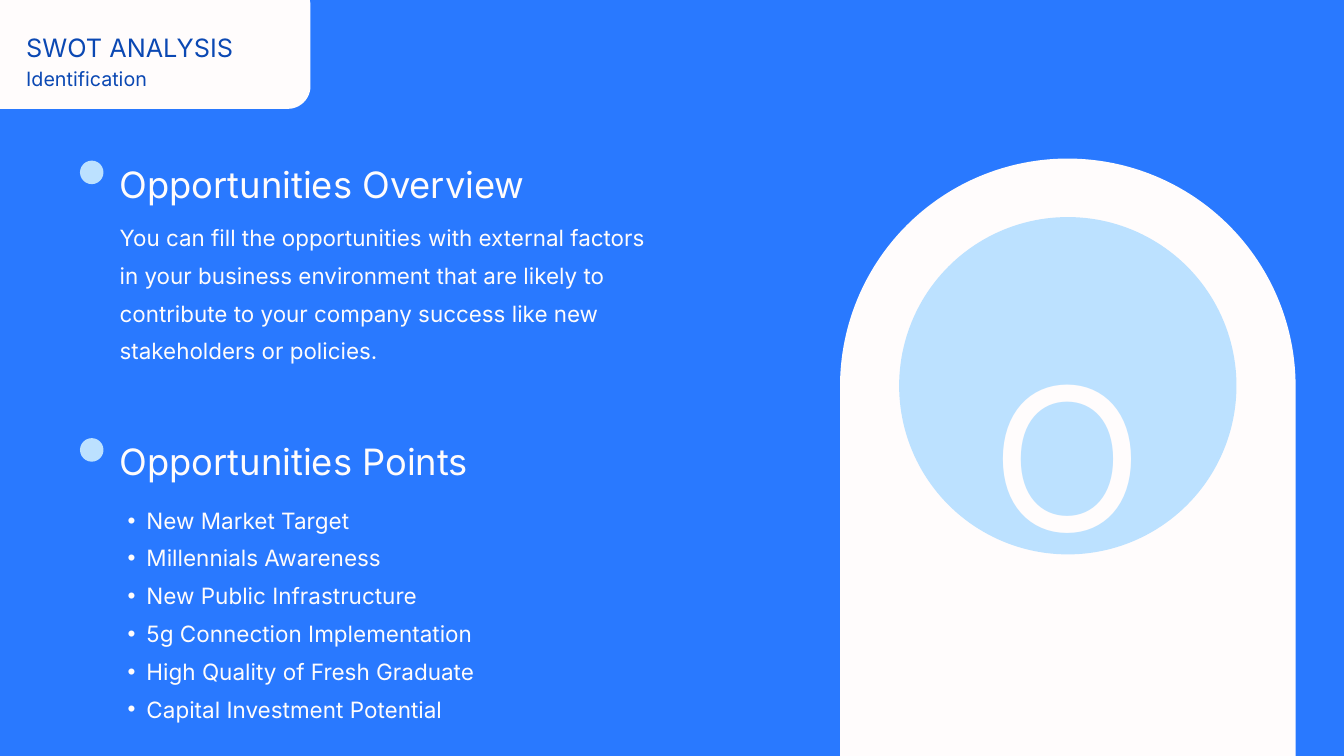
from pptx import Presentation
from pptx.dml.color import RGBColor
from pptx.enum.shapes import MSO_SHAPE
from pptx.enum.text import MSO_AUTO_SIZE, PP_ALIGN
from pptx.oxml.xmlchemy import OxmlElement
from pptx.util import Inches, Pt

BLUE, NAVY, SKY, WHITE = "2979FF", "0B48B3", "BCE1FF", "FFFCFC"


def paint(fill, color):
    fill.solid()
    fill.fore_color.rgb = RGBColor.from_string(color)


def add_text(box, lines, size, color=WHITE):
    """Add a text box at box (left, top, width, height), one paragraph per line."""
    frame = slide.shapes.add_textbox(*map(Inches, box)).text_frame
    frame.margin_left = frame.margin_right = 0
    frame.margin_top = frame.margin_bottom = 0
    frame.word_wrap = True
    frame.auto_size = MSO_AUTO_SIZE.SHAPE_TO_FIT_TEXT
    frame.text = "\n".join(lines)
    for par in frame.paragraphs:
        par.line_spacing = 1.4
        font = par.runs[0].font
        font.name, font.size = "Inter", Pt(size)
        paint(font.fill, color)
    return frame.paragraphs


prs = Presentation()
prs.slide_width, prs.slide_height = Inches(20), Inches(11.25)
slide = prs.slides.add_slide(prs.slide_layouts[6])
paint(slide.background.fill, BLUE)

# Header tab, arch, disc and heading dots
for kind, box, color, round_by in [
    (MSO_SHAPE.ROUNDED_RECTANGLE, (-0.56, -0.25, 5.18, 1.87), WHITE, 0.18),
    (MSO_SHAPE.ROUND_2_SAME_RECTANGLE, (12.5, 2.36, 6.78, 10.14), WHITE, 0.5),
    (MSO_SHAPE.OVAL, (13.38, 3.23, 5.02, 5.02), SKY, None),
    (MSO_SHAPE.OVAL, (1.19, 2.39, 0.35, 0.35), SKY, None),
    (MSO_SHAPE.OVAL, (1.19, 6.52, 0.35, 0.35), SKY, None),
]:
    shape = slide.shapes.add_shape(kind, *map(Inches, box))
    shape.shadow.inherit = False
    shape.line.fill.background()
    paint(shape.fill, color)
    if round_by:
        shape.adjustments[0] = round_by

add_text((0.39, 0.3, 4.04, 0.5), ["SWOT ANALYSIS"], 27.1, NAVY)
add_text((0.39, 0.85, 2.84, 0.39), ["Identification"], 21.1, NAVY)

letter = add_text((14.17, 3.54, 3.44, 3.98), ["O"], 212.8)
letter[0].alignment = PP_ALIGN.CENTER

add_text((1.78, 2.16, 8.22, 0.73), ["Opportunities Overview"], 38.9)
add_text((1.78, 3.18, 10.19, 1.82), [
    "You can fill the opportunities with external factors",
    "in your business environment that are likely to",
    "contribute to your company success like new",
    "stakeholders or policies.",
], 24)

add_text((1.78, 6.28, 8.22, 0.73), ["Opportunities Points"], 38.9)
points = add_text((1.61, 7.38, 9.99, 2.75), [
    "New Market Target",
    "Millennials Awareness",
    "New Public Infrastructure",
    "5g Connection Implementation",
    "High Quality of Fresh Graduate",
    "Capital Investment Potential",
], 24.1)
for par in points:
    par.level = 1
    props = par._p.get_or_add_pPr()
    props.set("marL", str(Inches(0.57)))
    props.set("indent", str(Inches(-0.28)))
    face = OxmlElement("a:buFont")
    face.set("typeface", "Arial")
    mark = OxmlElement("a:buChar")
    mark.set("char", "•")
    props.extend([face, mark])

prs.save("out.pptx")
